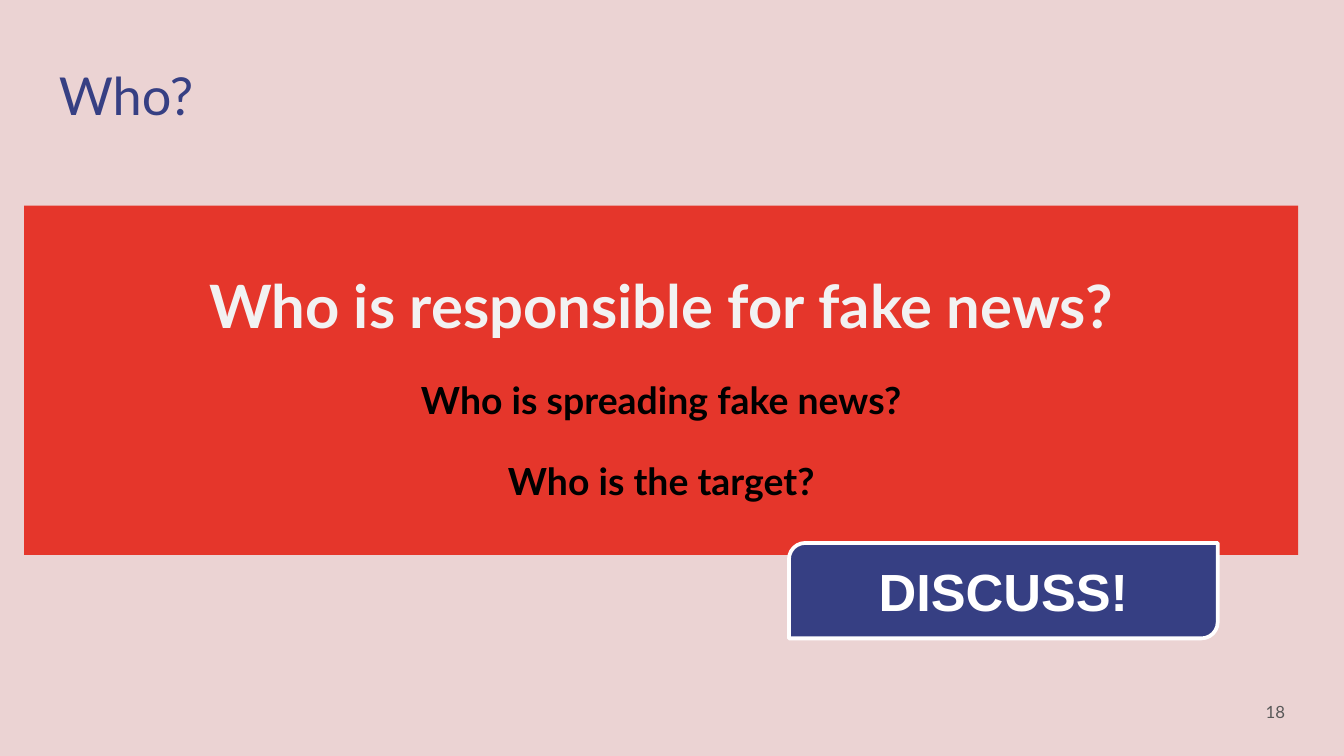
"""Build the "Who?" discussion slide."""
import pptx
import pptx.dml.color
import pptx.enum.shapes
import pptx.enum.text
import pptx.util

Inches = pptx.util.Inches
Pt = pptx.util.Pt
SHAPE = pptx.enum.shapes.MSO_SHAPE
ALIGN = pptx.enum.text.PP_ALIGN
ANCHOR = pptx.enum.text.MSO_ANCHOR


def rgb(color):
    return pptx.dml.color.RGBColor.from_string(color)


def write(sp, lines, align, anchor, inset=0.1, spacing=None, after=None):
    tf = sp.text_frame
    tf.word_wrap = True
    tf.vertical_anchor = anchor
    tf.margin_left = tf.margin_right = Inches(0.1)
    tf.margin_top = tf.margin_bottom = Inches(inset)
    for i, (text, size, font, color, bold) in enumerate(lines):
        p = tf.add_paragraph() if i else tf.paragraphs[0]
        p.alignment = align
        p.line_spacing = spacing
        p.space_after = after
        r = p.add_run()
        r.text = text
        r.font.size = Pt(size)
        r.font.name = font
        r.font.bold = bold
        r.font.color.rgb = rgb(color)


prs = pptx.Presentation()
prs.slide_width = Inches(10)
prs.slide_height = Inches(10 * 9 / 16)
s = prs.slides.add_slide(prs.slide_layouts[6])
s.background.fill.solid()
s.background.fill.fore_color.rgb = rgb("EBD3D3")

title = s.shapes.add_textbox(Inches(0.34), Inches(0.37), Inches(7.44), Inches(0.63))
write(title, [("Who?", 28, "Lato", "363F83", False)], ALIGN.LEFT, ANCHOR.TOP)

number = s.shapes.add_textbox(Inches(9.06), Inches(5.08), Inches(0.6), Inches(0.43))
write(number, [("18", 9, "Lato", "595959", False)], ALIGN.RIGHT, ANCHOR.MIDDLE)

banner = s.shapes.add_shape(SHAPE.RECTANGLE, Inches(0.18), Inches(1.53), Inches(9.48), Inches(2.6))
banner.shadow.inherit = False
banner.fill.solid()
banner.fill.fore_color.rgb = rgb("E5362B")
banner.line.fill.background()
questions = [
    ("Who is responsible for fake news?", 32, "Lato", "F2F2F2", True),
    ("Who is spreading fake news?", 20, "Lato", "000000", True),
    ("Who is the target?", 20, "Lato", "000000", True),
]
write(banner, questions, ALIGN.CENTER, ANCHOR.MIDDLE, spacing=1.15, after=Pt(16))

button = s.shapes.add_shape(SHAPE.ROUND_2_DIAG_RECTANGLE, Inches(5.87), Inches(4.04), Inches(3.19), Inches(0.71))
button.adjustments[0] = 0.17
button.adjustments[1] = 0
button.shadow.inherit = False
button.fill.solid()
button.fill.fore_color.rgb = rgb("363F83")
button.line.color.rgb = rgb("FFFFFF")
button.line.width = Pt(2)
write(button, [("DISCUSS!", 28, "Arial", "FFFFFF", True)], ALIGN.CENTER, ANCHOR.MIDDLE, inset=0.05)

prs.save("out.pptx")
